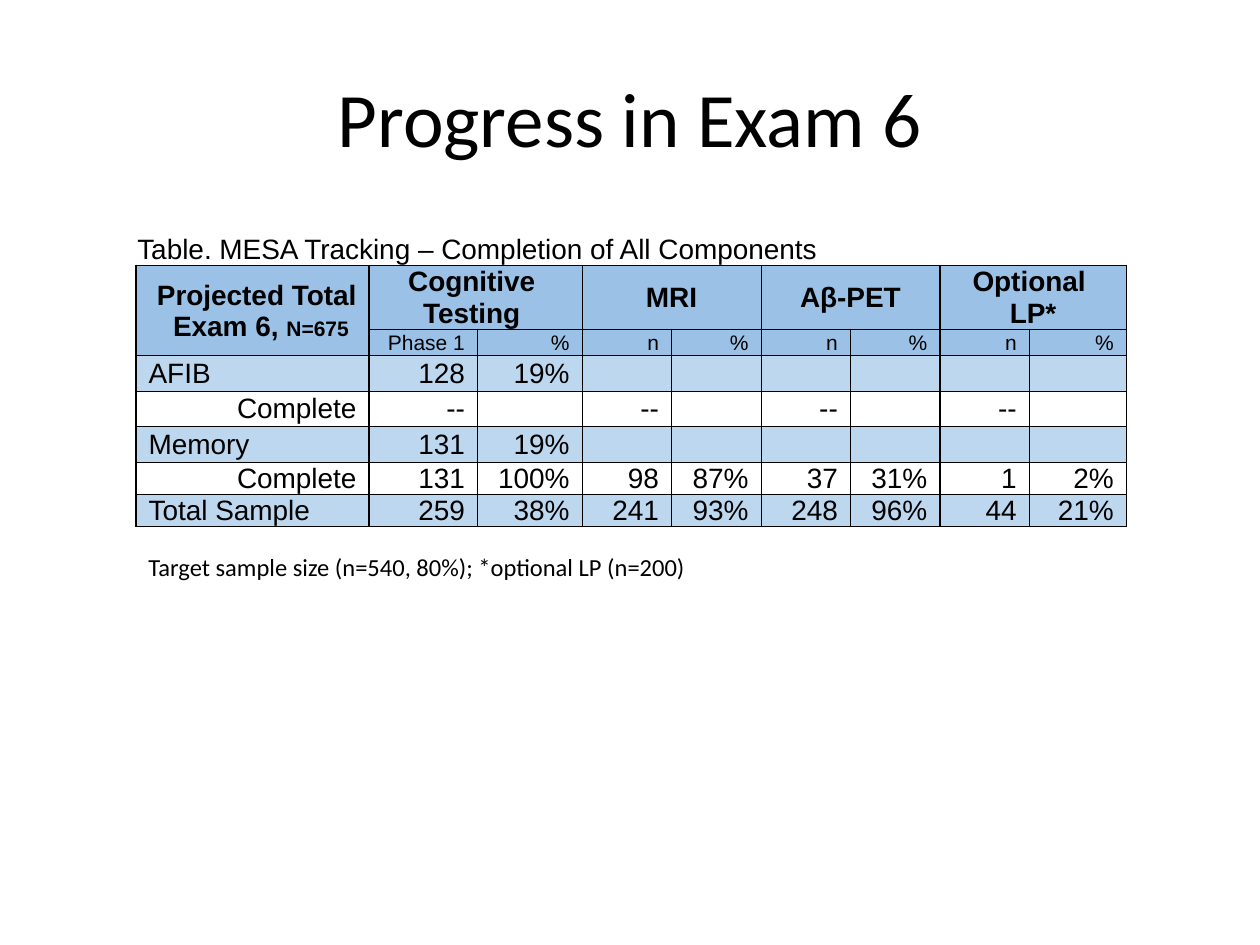
from lxml.etree import SubElement
from pptx import Presentation
from pptx.dml.color import RGBColor
from pptx.enum.text import MSO_ANCHOR as Anchor, MSO_AUTO_SIZE as AutoSize, PP_ALIGN as Align
from pptx.oxml import parse_xml
from pptx.oxml.ns import nsdecls, qn
from pptx.util import Inches, Pt

BLACK = RGBColor(0x00, 0x00, 0x00)
WHITE = RGBColor(0xFF, 0xFF, 0xFF)
HEADER_BLUE = RGBColor(0x9B, 0xC2, 0xE6)
ROW_BLUE = RGBColor(0xBD, 0xD7, 0xEE)

THICK, THIN = 1, 0.5
COLUMN_WIDTHS = [1.85, 0.86, 0.83, 0.71, 0.71, 0.71, 0.71, 0.71, 0.77]
ROW_HEIGHTS = [0.21] * 3 + [0.2] * 5
CAPTION = "Table. MESA Tracking – Completion of All Components"
COMPONENTS = ["Cognitive \nTesting ", "MRI", "Aβ-PET", "Optional \nLP*"]
ROWS = [
    [CAPTION] + [""] * 8,
    ["Projected Total\nExam 6, "] + [text for name in COMPONENTS for text in (name, "")],
    ["", "Phase 1", "%"] + ["n", "%"] * 3,
    ["AFIB", "128", "19%"] + [""] * 6,
    ["Complete"] + ["--", ""] * 4,
    ["Memory", "131", "19%"] + [""] * 6,
    ["Complete", "131", "100%", "98", "87%", "37", "31%", "1", "2%"],
    ["Total Sample", "259", "38%", "241", "93%", "248", "96%", "44", "21%"],
]
ROW_FILLS = [WHITE, HEADER_BLUE, HEADER_BLUE, ROW_BLUE, WHITE, ROW_BLUE, WHITE, ROW_BLUE]
THICK_EDGES = {0, 1, 7, 9}


def format_run(run, size, font="Arial", bold=False):
    run.font.name = font
    run.font.size = Pt(size)
    run.font.bold = bold
    run.font.color.rgb = BLACK


def border_cell(cell, widths):
    properties = cell._tc.get_or_add_tcPr()
    for position, (side, width) in enumerate(zip("LRTB", widths)):
        line = parse_xml(f'<a:ln{side} {nsdecls("a")} w="{Pt(width)}"/>')
        if width:
            SubElement(SubElement(line, qn("a:solidFill")), qn("a:srgbClr")).set("val", str(BLACK))
        else:
            SubElement(line, qn("a:noFill"))
        properties.insert(position, line)


def cell_borders(cell, row, column):
    if row == 0:
        return 0, 0, 0, THICK
    left, right = (THICK if edge in THICK_EDGES else THIN
                   for edge in (column, column + cell.span_width))
    return left, right, THICK if row == 1 else THIN, THIN


def cell_alignment(row, column, text):
    if row == 0 or (column == 0 and row > 2 and text != "Complete"):
        return Align.LEFT
    return Align.CENTER if row == 1 and column else Align.RIGHT


def fill_cell(cell, row, column):
    text = ROWS[row][column]
    size = 12 if row == 2 else 16
    side = Inches(0.1 if row else 0.01)
    cell.margin_left = cell.margin_right = side
    cell.margin_top, cell.margin_bottom = Inches(0.01), 0
    cell.vertical_anchor = Anchor.MIDDLE if row else Anchor.BOTTOM
    cell.fill.solid()
    cell.fill.fore_color.rgb = ROW_FILLS[row]
    cell.text_frame.text = text
    for paragraph in cell.text_frame.paragraphs:
        paragraph.alignment = cell_alignment(row, column, text)
        for run in paragraph.runs:
            format_run(run, size, bold=row == 1)
        if not text:
            SubElement(paragraph._p, qn("a:endParaRPr")).set("sz", str(size * 100))
    if not cell.is_spanned:
        border_cell(cell, cell_borders(cell, row, column))


def add_title(slide, left, top, width, height):
    title = slide.shapes.title
    title.left, title.top, title.width, title.height = left, top, width, height
    title.text_frame.text = "Progress in Exam 6"
    title.text_frame.vertical_anchor = Anchor.MIDDLE
    heading = title.text_frame.paragraphs[0]
    heading.alignment = Align.CENTER
    format_run(heading.runs[0], 44, "Calibri")


def add_progress_table(slide, left, top, width, height):
    frame = slide.shapes.add_table(len(ROWS), len(COLUMN_WIDTHS), left, top, width, height)
    table = frame.table
    table.first_row = table.horz_banding = False
    for column, column_width in zip(table.columns, COLUMN_WIDTHS):
        column.width = Inches(column_width)
    for row, row_height in zip(table.rows, ROW_HEIGHTS):
        row.height = Inches(row_height)
    frame.height = height

    table.cell(0, 0).merge(table.cell(0, 8))
    table.cell(1, 0).merge(table.cell(2, 0))
    for column in range(1, 9, 2):
        table.cell(1, column).merge(table.cell(1, column + 1))
    for row in range(len(ROWS)):
        for column in range(len(COLUMN_WIDTHS)):
            fill_cell(table.cell(row, column), row, column)

    exam = table.cell(1, 0).text_frame.paragraphs[1]
    for text, size in (("N=675", 12), ("\N{NO-BREAK SPACE}", 16)):
        run = exam.add_run()
        run.text = text
        format_run(run, size, bold=True)


def add_footnote(slide, left, top, width, height):
    footnote = slide.shapes.add_textbox(left, top, width, height).text_frame
    footnote.word_wrap = True
    footnote.auto_size = AutoSize.SHAPE_TO_FIT_TEXT
    footnote.text = "Target sample size (n=540, 80%); *optional LP (n=200)"
    format_run(footnote.paragraphs[0].runs[0], 14, "Calibri")


def main():
    deck = Presentation()
    deck.slide_width, deck.slide_height = Inches(10), Inches(7.5)
    slide = deck.slides.add_slide(deck.slide_layouts[5])
    add_title(slide, Inches(0.5), Inches(0.3), Inches(9), Inches(1.25))
    add_progress_table(slide, Inches(1.08), Inches(1.85), Inches(7.85), Inches(2.42))
    add_footnote(slide, Inches(1.08), Inches(4.33), Inches(7.83), Inches(0.34))
    deck.save("out.pptx")


if __name__ == "__main__":
    main()
